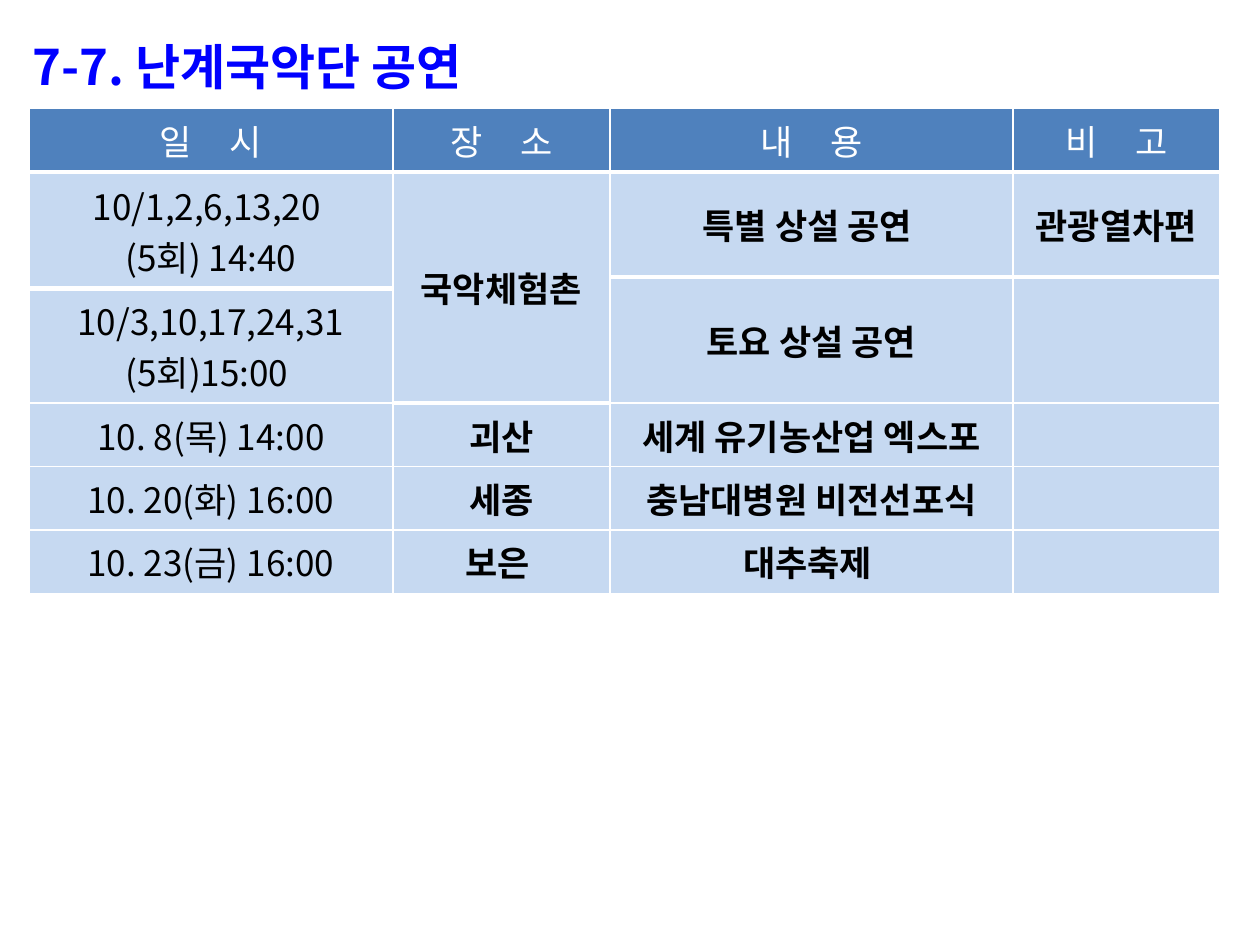
from lxml.etree import SubElement as Sub
from pptx import Presentation
from pptx.dml.color import RGBColor as RGB
from pptx.enum.text import MSO_ANCHOR as Anchor, PP_ALIGN as Align
from pptx.oxml.ns import qn
from pptx.util import Pt

FONT = "Noto Sans CJK KR"
HUES = {"title": "0000FF", "head": "4F81BD", "body": "C6D9F1",
        "white": "FFFFFF", "ink": "000000"}
COLS = [208, 124, 230.5, 118]
ROWS = [30, 60, 6.75, 53.5, 34.5, 36, 36]
HEADS = ["일 시", "장 소", "내 용", "비 고"]
CELLS = [
    (1, 0, 2, "10/1,2,6,13,20 \n(5회) 14:40"),
    (1, 1, 3, "국악체험촌"),
    (1, 2, 1, "특별 상설 공연 "),
    (1, 3, 1, "관광열차편"),
    (2, 2, 2, "토요 상설 공연"),
    (2, 3, 2, ""),
    (3, 0, 1, "10/3,10,17,24,31\n(5회)15:00 "),
    (4, 0, 1, "10. 8(목) 14:00"),
    (4, 1, 1, "괴산"),
    (4, 2, 1, "세계 유기농산업 엑스포"),
    (5, 0, 1, "10. 20(화) 16:00"),
    (5, 1, 1, "세종"),
    (5, 2, 1, "충남대병원 비전선포식"),
    (6, 0, 1, "10. 23(금) 16:00"),
    (6, 1, 1, "보은 "),
    (6, 2, 1, "대추축제 "),
]


def write(frame, text, size=20, hue="ink", bold=False, align=Align.CENTER, gap=0):
    for i, line in enumerate(text.split("\n")):
        para = frame.paragraphs[0] if i == 0 else frame.add_paragraph()
        para.alignment = align
        run = para.add_run()
        run.text = line
        font = run.font
        font.name, font.size, font.bold = FONT, Pt(size), bold
        font.color.rgb = RGB.from_string(HUES[hue])
        props = run._r.get_or_add_rPr()
        Sub(props, qn("a:ea"), typeface=FONT)
        if gap:
            props.set("spc", str(round(gap * 100)))


def edge(cell, side, wide):
    props = cell._tc.get_or_add_tcPr()
    line = Sub(props, qn(f"a:ln{side}"), w=str(Pt(wide)))
    fill = Sub(line, qn("a:solidFill"))
    Sub(fill, qn("a:srgbClr"), val=HUES["white"])


def add_title(slide, x, y, w, h):
    title = slide.shapes.title
    title.left, title.top, title.width, title.height = map(Pt, (x, y, w, h))
    frame = title.text_frame
    frame.word_wrap = True
    frame.vertical_anchor = Anchor.MIDDLE
    write(frame, "7-7. 난계국악단 공연", size=28, hue="title", bold=True,
          align=Align.LEFT)


def add_plan(slide, x, y, w, h):
    shape = slide.shapes.add_table(len(ROWS), len(COLS), *map(Pt, (x, y, w, h)))
    table = shape.table
    table.horz_banding = False
    for col, wide in zip(table.columns, COLS):
        col.width = Pt(wide)
    for r, (row, high) in enumerate(zip(table.rows, ROWS)):
        row.height = Pt(high)
        for cell in row.cells:
            cell.vertical_anchor = Anchor.MIDDLE
            if r < 2:
                edge(cell, "T" if r else "B", 3)
            cell.fill.solid()
            cell.fill.fore_color.rgb = RGB.from_string(HUES["body" if r else "head"])
    for c, text in enumerate(HEADS):
        write(table.cell(0, c).text_frame, text, hue="white", gap=8.5)
    for r, c, span, text in CELLS:
        cell = table.cell(r, c)
        if span > 1:
            cell.merge(table.cell(r + span - 1, c))
        if text:
            write(cell.text_frame, text, bold=c > 0)


def main():
    deck = Presentation()
    deck.slide_width, deck.slide_height = Pt(720), Pt(540)
    slide = deck.slides.add_slide(deck.slide_layouts[5])
    add_plan(slide, 16.5, 62, sum(COLS), sum(ROWS))
    add_title(slide, 11.5, 13.5, 692, 48)
    deck.save("out.pptx")


if __name__ == "__main__":
    main()
